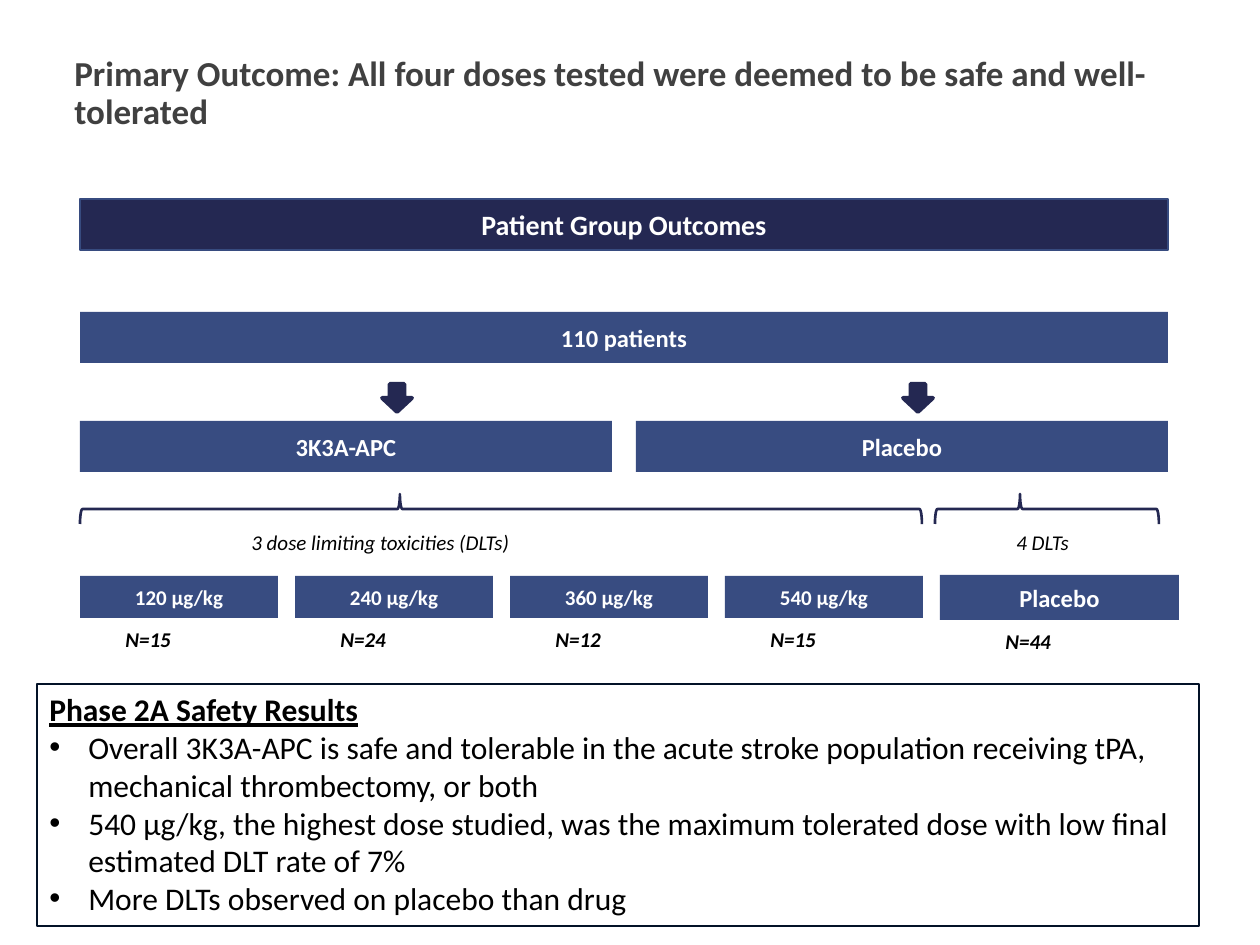
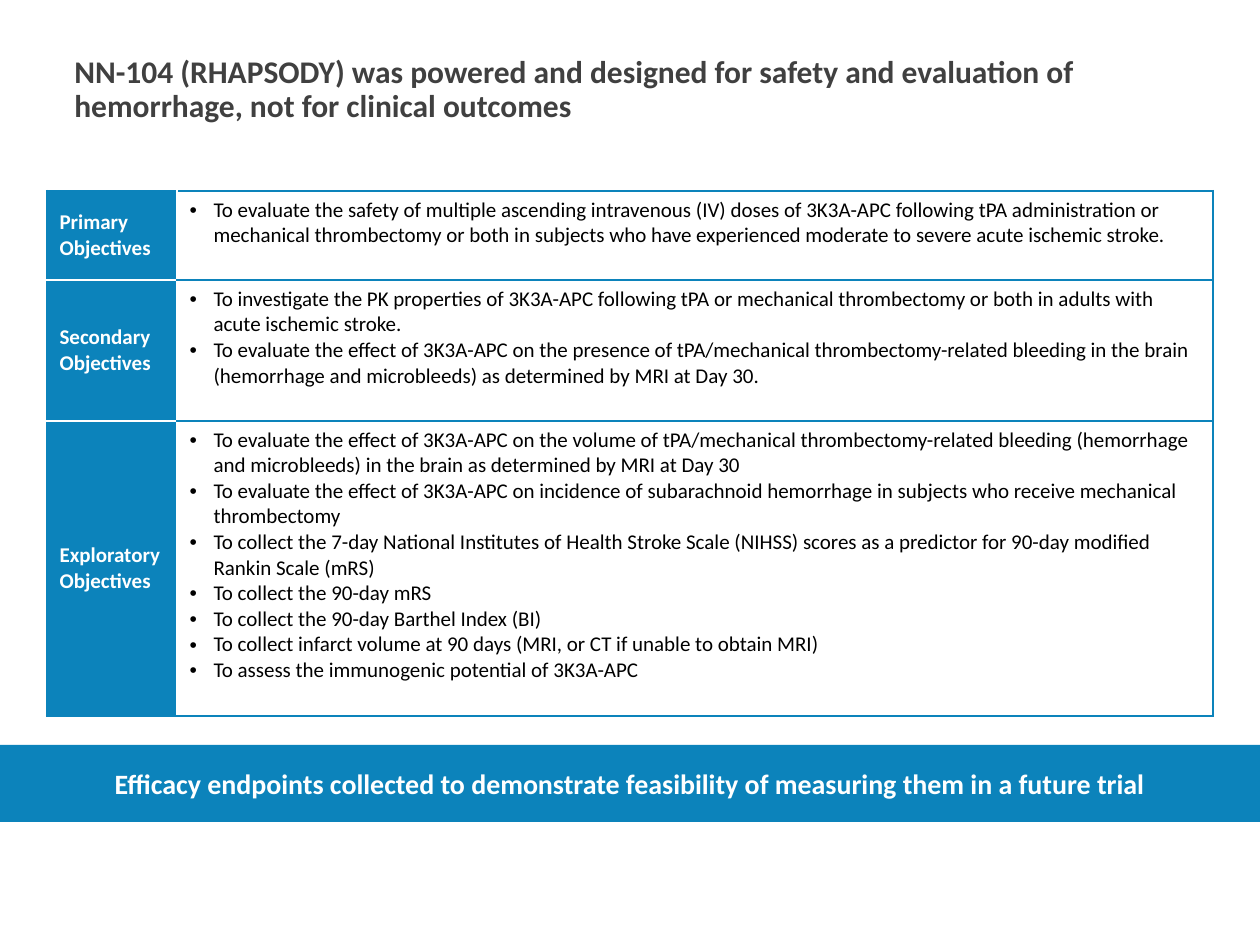
from lxml.etree import SubElement as Sub
from pptx import Presentation
from pptx.dml.color import RGBColor as RGB
from pptx.enum.shapes import MSO_SHAPE as Kind
from pptx.enum.text import MSO_ANCHOR as Anchor, PP_ALIGN as Align
from pptx.oxml.ns import qn
from pptx.util import Emu, Pt

SCALE = 914400 / 126
FACE = "Calibri"
WHITE = RGB(0xFF, 0xFF, 0xFF)
BLACK = RGB(0, 0, 0)
GRAY = RGB(0x40, 0x40, 0x40)
NAVY = RGB(0x24, 0x28, 0x52)
BLUE = RGB(0x38, 0x4C, 0x81)
EDGE = RGB(0x37, 0x4B, 0x7F)
INK = RGB(0x03, 0x12, 0x27)
CYAN = RGB(0x0C, 0x83, 0xBB)


def px(*sizes):
    return [Emu(round(size * SCALE)) for size in sizes]


class Deck:
    def __init__(self):
        self.file = Presentation()
        self.file.slide_width, self.file.slide_height = px(1260, 945)
        self.slide = None

    def page(self, title, size):
        self.slide = self.file.slides.add_slide(self.file.slide_layouts[6])
        para = self.text(title, 62, 50, 1135, 97, size, GRAY, bold=True)
        para.line_spacing = 0.9

    def style(self, para, size, color, bold=False, italic=False):
        font = para.font
        font.name, font.size = FACE, Pt(size)
        font.bold, font.italic = bold, italic
        font.color.rgb = color

    def bullet(self, para, indent):
        props = para._p.get_or_add_pPr()
        step = px(indent)[0]
        props.set("marL", str(step))
        props.set("indent", str(-step))
        Sub(props, qn("a:buFont"), typeface="Arial")
        Sub(props, qn("a:buChar"), char="•")

    def lines(self, frame, items, size, indent, first=True):
        for item in items:
            para = frame.paragraphs[0] if first else frame.add_paragraph()
            first = False
            para.text = item
            para.alignment = Align.LEFT
            self.bullet(para, indent)
            self.style(para, size, BLACK)

    def text(self, words, x, y, w, h, size, color=BLACK, bold=False, italic=False):
        frame = self.slide.shapes.add_textbox(*px(x, y, w, h)).text_frame
        frame.word_wrap = True
        para = frame.paragraphs[0]
        para.text = words
        self.style(para, size, color, bold, italic)
        return para

    def shape(self, kind, x, y, w, h, fill=None, line=None, width=1):
        shape = self.slide.shapes.add_shape(kind, *px(x, y, w, h))
        shape.shadow.inherit = False
        if fill is None:
            shape.fill.background()
        else:
            shape.fill.solid()
            shape.fill.fore_color.rgb = fill
        if line is None:
            shape.line.fill.background()
        else:
            shape.line.color.rgb = line
            shape.line.width = Pt(width)
        return shape

    def bar(self, words, x, y, w, h, size=14, fill=BLUE, line=None):
        frame = self.shape(Kind.RECTANGLE, x, y, w, h, fill, line).text_frame
        frame.word_wrap = True
        frame.vertical_anchor = Anchor.MIDDLE
        para = frame.paragraphs[0]
        para.text = words
        para.alignment = Align.CENTER
        self.style(para, size, WHITE, bold=True)

    def arrow(self, x, y):
        self.shape(Kind.DOWN_ARROW, x, y, 30, 28, NAVY, NAVY, 2.25)

    def brace(self, x, y, w, h):
        left, top = x + (w - h) / 2, y + (h - w) / 2
        brace = self.shape(Kind.RIGHT_BRACE, left, top, h, w, None, NAVY, 1.5)
        brace.adjustments[0], brace.adjustments[1] = 0.083, 0.38
        brace.rotation = 270

    def panel(self, head, items, x, y, w, h):
        frame = self.shape(Kind.RECTANGLE, x, y, w, h, None, INK, 1.5).text_frame
        frame.word_wrap = True
        frame.vertical_anchor = Anchor.TOP
        para = frame.paragraphs[0]
        para.text = head
        para.alignment = Align.LEFT
        self.style(para, 18, BLACK, bold=True)
        para.font.underline = True
        self.lines(frame, items, 18, 39, first=False)

    def rule(self, cell, side, color, width):
        line = Sub(cell._tc.get_or_add_tcPr(), qn("a:ln" + side), w=str(Pt(width)))
        Sub(Sub(line, qn("a:solidFill")), qn("a:srgbClr"), val=str(color))

    def table(self, rows, x, y, widths, heights):
        frame = self.slide.shapes.add_table(
            len(rows), 2, *px(x, y, sum(widths), sum(heights)))
        table = frame.table
        table.first_row = table.horz_banding = False
        for col, width in zip(table.columns, px(*widths)):
            col.width = width
        for row, height in zip(table.rows, px(*heights)):
            row.height = height
        last = len(rows) - 1
        for i, (name, goals) in enumerate(rows):
            head, body = table.cell(i, 0), table.cell(i, 1)
            self.rule(head, "L", CYAN, 1.5)
            self.rule(body, "R", CYAN, 1.5)
            for side, outer in (("T", i == 0), ("B", i == last)):
                self.rule(head, side, CYAN if outer else WHITE, 1.5)
                self.rule(body, side, CYAN, 1.5 if outer else 1)
            head.fill.solid()
            head.fill.fore_color.rgb = CYAN
            body.fill.background()
            head.vertical_anchor = Anchor.MIDDLE
            body.vertical_anchor = Anchor.TOP
            para = head.text_frame.paragraphs[0]
            para.text = name
            self.style(para, 12, WHITE, bold=True)
            self.lines(body.text_frame, goals, 12, 24)


DOSES = [("120 μg/kg", "N=15"), ("240 μg/kg", "N=24"),
         ("360 μg/kg", "N=12"), ("540 μg/kg", "N=15")]

RESULTS = [
    "Overall 3K3A-APC is safe and tolerable in the acute stroke population "
    "receiving tPA, mechanical thrombectomy, or both",
    "540 μg/kg, the highest dose studied, was the maximum tolerated dose "
    "with low final estimated DLT rate of 7%",
    "More DLTs observed on placebo than drug",
]

GOALS = [
    ("Primary Objectives", [
        "To evaluate the safety of multiple ascending intravenous (IV) doses of "
        "3K3A-APC following tPA administration or mechanical thrombectomy or both "
        "in subjects who have experienced moderate to severe acute ischemic stroke.",
    ]),
    ("Secondary Objectives", [
        "To investigate the PK properties of 3K3A-APC following tPA or mechanical "
        "thrombectomy or both in adults with acute ischemic stroke.",
        "To evaluate the effect of 3K3A-APC on the presence of tPA/mechanical "
        "thrombectomy-related bleeding in the brain (hemorrhage and microbleeds) "
        "as determined by MRI at Day 30.",
    ]),
    ("Exploratory Objectives", [
        "To evaluate the effect of 3K3A-APC on the volume of tPA/mechanical "
        "thrombectomy-related bleeding (hemorrhage and microbleeds) in the brain "
        "as determined by MRI at Day 30",
        "To evaluate the effect of 3K3A-APC on incidence of subarachnoid "
        "hemorrhage in subjects who receive mechanical thrombectomy",
        "To collect the 7-day National Institutes of Health Stroke Scale (NIHSS) "
        "scores as a predictor for 90-day modified Rankin Scale (mRS)",
        "To collect the 90-day mRS",
        "To collect the 90-day Barthel Index (BI)",
        "To collect infarct volume at 90 days (MRI, or CT if unable to obtain MRI)",
        "To assess the immunogenic potential of 3K3A-APC",
    ]),
]


def outcome(deck):
    deck.page("Primary Outcome: All four doses tested were deemed to be safe "
              "and well-tolerated", 20)
    deck.bar("Patient Group Outcomes", 80, 199, 1088, 51, 16, NAVY, EDGE)
    deck.bar("110 patients", 80, 312, 1088, 51)
    for name, x, tip in (("3K3A-APC", 80, 382), ("Placebo", 636, 903)):
        deck.arrow(tip, 384)
        deck.bar(name, x, 421, 532, 51)
    deck.brace(80, 494, 842, 30)
    deck.brace(935, 494, 224, 30)
    deck.text("3 dose limiting toxicities (DLTs)", 239, 523, 617, 39, 12, italic=True)
    deck.text("4 DLTs", 1004, 523, 134, 39, 12, italic=True)
    for i, (dose, count) in enumerate(DOSES):
        x = 80 + 215 * i
        deck.bar(dose, x, 576, 198, 42, 12)
        deck.text(count, x + 33, 620, 134, 39, 12, bold=True, italic=True)
    deck.bar("Placebo", 940, 575, 239, 45)
    deck.text("N=44", 993, 622, 134, 39, 12, bold=True, italic=True)
    deck.panel("Phase 2A Safety Results", RESULTS, 37, 684, 1162, 242)


def design(deck):
    deck.page("NN-104 (RHAPSODY) was powered and designed for safety and "
              "evaluation of hemorrhage, not for clinical outcomes", 18)
    deck.table(GOALS, 47, 191, [130, 1036], [89, 141, 295])
    deck.bar("Efficacy endpoints collected to demonstrate feasibility of "
             "measuring them in a future trial", 0, 745, 1260, 77, 16, CYAN)


def main():
    deck = Deck()
    outcome(deck)
    design(deck)
    deck.file.save("out.pptx")


if __name__ == "__main__":
    main()
